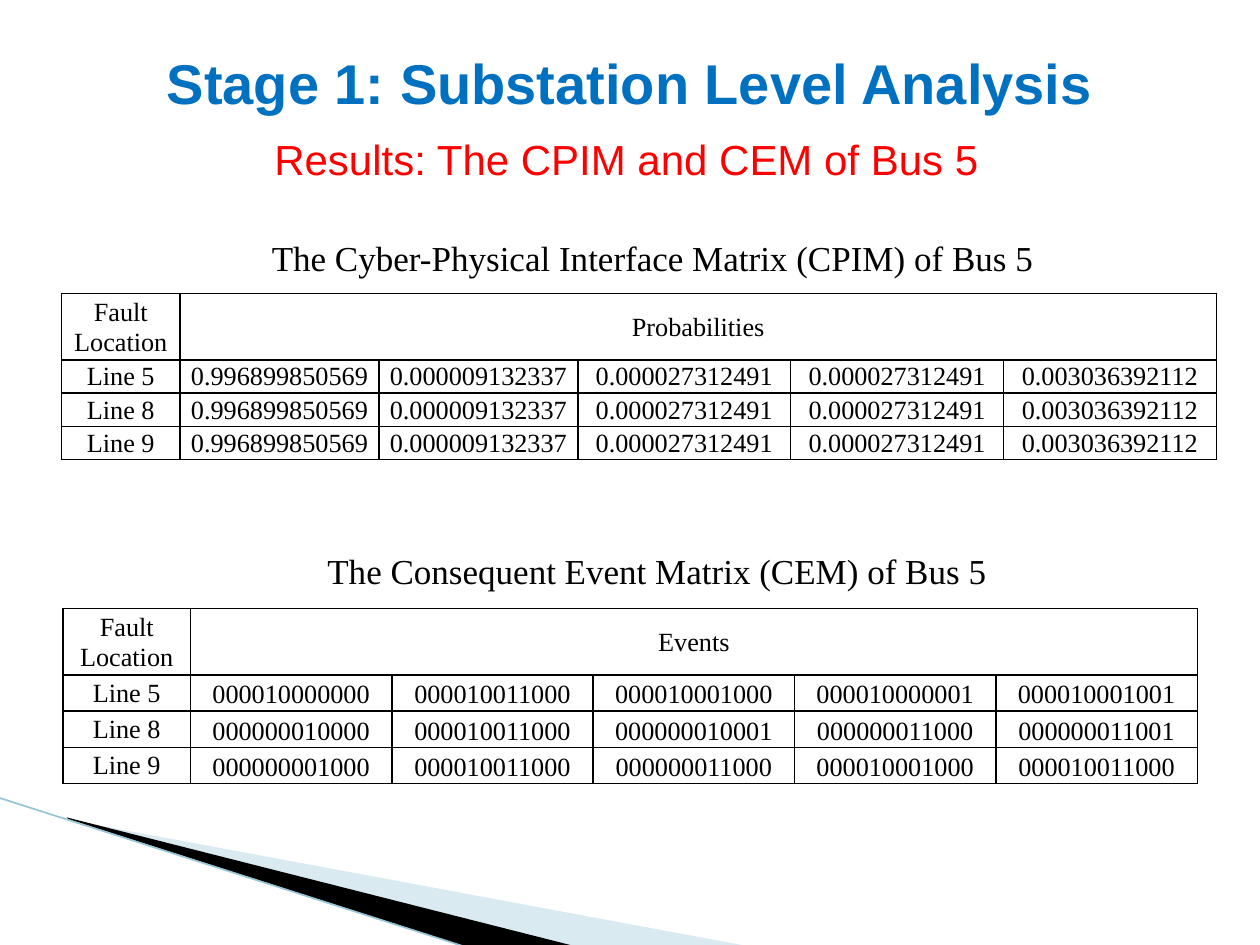
from dataclasses import dataclass

from lxml import etree
from pptx import Presentation
from pptx.dml.color import RGBColor
from pptx.enum import shapes, text
from pptx.oxml import ns
from pptx.util import Cm, Pt


@dataclass(frozen=True)
class Theme:
    heading_font: str = "Arial"
    body_font: str = "Times New Roman"
    title_size: float = 32
    subtitle_size: float = 24
    caption_size: float = 20
    cell_size: float = 15
    title: str = "0070C0"
    subtitle: str = "FF0000"
    ink: str = "000000"
    pale_wedge: str = "A0CBDC"
    edge: str = "97C5D8"
    edge_width: float = 0.95
    border_width: float = 1


THEME = Theme()
LINES = ["Line 5", "Line 8", "Line 9"]
PROBABILITIES = [
    ["0.996899850569", "0.000009132337", "0.000027312491", "0.000027312491", "0.003036392112"]
] * len(LINES)
EVENTS = [
    ["000010000000", "000010011000", "000010001000", "000010000001", "000010001001"],
    ["000000010000", "000010011000", "000000010001", "000000011000", "000000011001"],
    ["000000001000", "000010011000", "000000011000", "000010001000", "000010011000"],
]


def style(paragraph, font, size, color, bold=False):
    paragraph.font.name = font
    paragraph.font.size = Pt(size)
    paragraph.font.color.rgb = RGBColor.from_string(color)
    paragraph.font.bold = bold


def add_wedge(slide, points, color, opacity=100):
    start, *rest = [(Cm(x), Cm(y)) for x, y in points]
    builder = slide.shapes.build_freeform(*start)
    builder.add_line_segments(rest, close=True)
    wedge = builder.convert_to_shape()
    wedge.shadow.inherit = False
    wedge.fill.solid()
    wedge.fill.fore_color.rgb = RGBColor.from_string(color)
    wedge.line.fill.background()
    if opacity < 100:
        tint = wedge.fill._xPr.find(".//" + ns.qn("a:srgbClr"))
        etree.SubElement(tint, ns.qn("a:alpha"), val=str(opacity * 1000))


def add_edge(slide, start, end):
    edge = slide.shapes.add_connector(
        shapes.MSO_CONNECTOR.STRAIGHT, *(Cm(v) for v in start + end))
    edge.line.color.rgb = RGBColor.from_string(THEME.edge)
    edge.line.width = Pt(THEME.edge_width)
    etree.SubElement(edge._element.spPr, ns.qn("a:effectLst"))


def add_heading(slide, wording, box, font, size, color):
    frame = slide.shapes.add_textbox(*(Cm(v) for v in box)).text_frame
    frame.word_wrap = True
    frame.auto_size = text.MSO_AUTO_SIZE.SHAPE_TO_FIT_TEXT
    paragraph = frame.paragraphs[0]
    paragraph.text = wording
    style(paragraph, font, size, color)
    return frame


def add_title(slide, wording):
    frame = add_heading(slide, wording, (1.27, 0.76, 22.86, 1.78),
                        THEME.heading_font, THEME.title_size, THEME.title)
    frame.auto_size = text.MSO_AUTO_SIZE.NONE
    frame.vertical_anchor = text.MSO_ANCHOR.MIDDLE
    frame.paragraphs[0].alignment = text.PP_ALIGN.CENTER
    frame.paragraphs[0].font.bold = True


def set_borders(cell):
    properties = cell._tc.get_or_add_tcPr()
    for position, side in enumerate(("a:lnL", "a:lnR", "a:lnT", "a:lnB")):
        border = etree.Element(ns.qn(side), w=str(Pt(THEME.border_width)))
        fill = etree.SubElement(border, ns.qn("a:solidFill"))
        etree.SubElement(fill, ns.qn("a:srgbClr"), val=THEME.ink)
        properties.insert(position, border)


def fill_cell(cell, wording, spacing):
    cell.fill.background()
    set_borders(cell)
    cell.vertical_anchor = text.MSO_ANCHOR.MIDDLE
    cell.margin_left = cell.margin_right = Cm(0.18)
    cell.margin_top = cell.margin_bottom = 0
    paragraph = cell.text_frame.paragraphs[0]
    paragraph.text = wording
    paragraph.alignment = text.PP_ALIGN.CENTER
    paragraph.line_spacing = spacing
    style(paragraph, THEME.body_font, THEME.cell_size, THEME.ink)


def add_matrix(slide, heading, values, corner, widths, row_height, value_spacing):
    label_spacing, header_height = 1.05, 1.33
    rows = [["Fault Location", heading] + [""] * (len(widths) - 2)]
    rows += [[line, *entries] for line, entries in zip(LINES, values)]
    heights = [header_height] + [row_height] * len(values)
    matrix = slide.shapes.add_table(
        len(rows), len(widths), *(Cm(v) for v in corner),
        Cm(sum(widths)), Cm(sum(heights))).table
    matrix.first_row = matrix.horz_banding = False
    for column, width in zip(matrix.columns, widths):
        column.width = Cm(width)
    for row, height in zip(matrix.rows, heights):
        row.height = Cm(height)
    for r, row in enumerate(rows):
        for c, wording in enumerate(row):
            spacing = value_spacing if r and c else label_spacing
            fill_cell(matrix.cell(r, c), wording, spacing)
    matrix.cell(0, 1).merge(matrix.cell(0, len(widths) - 1))


def main():
    deck = Presentation()
    deck.slide_width, deck.slide_height = Cm(25.4), Cm(19.05)
    slide = deck.slides.add_slide(deck.slide_layouts[6])

    add_wedge(slide, [(1.4, 16.53), (15.11, 19.08), (11.58, 19.08), (1.4, 16.51)],
              THEME.pale_wedge, opacity=40)
    add_wedge(slide, [(1.35, 16.48), (11.61, 19.08), (9.45, 19.1), (1.37, 16.51)], THEME.ink)
    add_edge(slide, (-0.03, 16.08), (9.42, 19.1))

    add_title(slide, "Stage 1: Substation Level Analysis")
    add_heading(slide, "Results: The CPIM and CEM of Bus 5", (5.28, 2.57, 16.31, 1.27),
                THEME.heading_font, THEME.subtitle_size, THEME.subtitle)
    captions = [
        ("The Cyber-Physical Interface Matrix (CPIM) of Bus 5", (5.23, 4.65, 16.31, 1.12)),
        ("The Consequent Event Matrix (CEM) of Bus 5", (6.35, 10.95, 15.04, 1.12)),
    ]
    for wording, box in captions:
        add_heading(slide, wording, box, THEME.body_font, THEME.caption_size, THEME.ink)

    add_matrix(slide, "Probabilities", PROBABILITIES, (1.24, 5.92),
               [2.39] + [4.01] * 2 + [4.29] * 3, 0.67, 1.05)
    add_matrix(slide, "Events", EVENTS, (1.27, 12.27), [2.57] + [4.06] * 5, 0.73, 1.15)
    deck.save("out.pptx")


if __name__ == "__main__":
    main()
